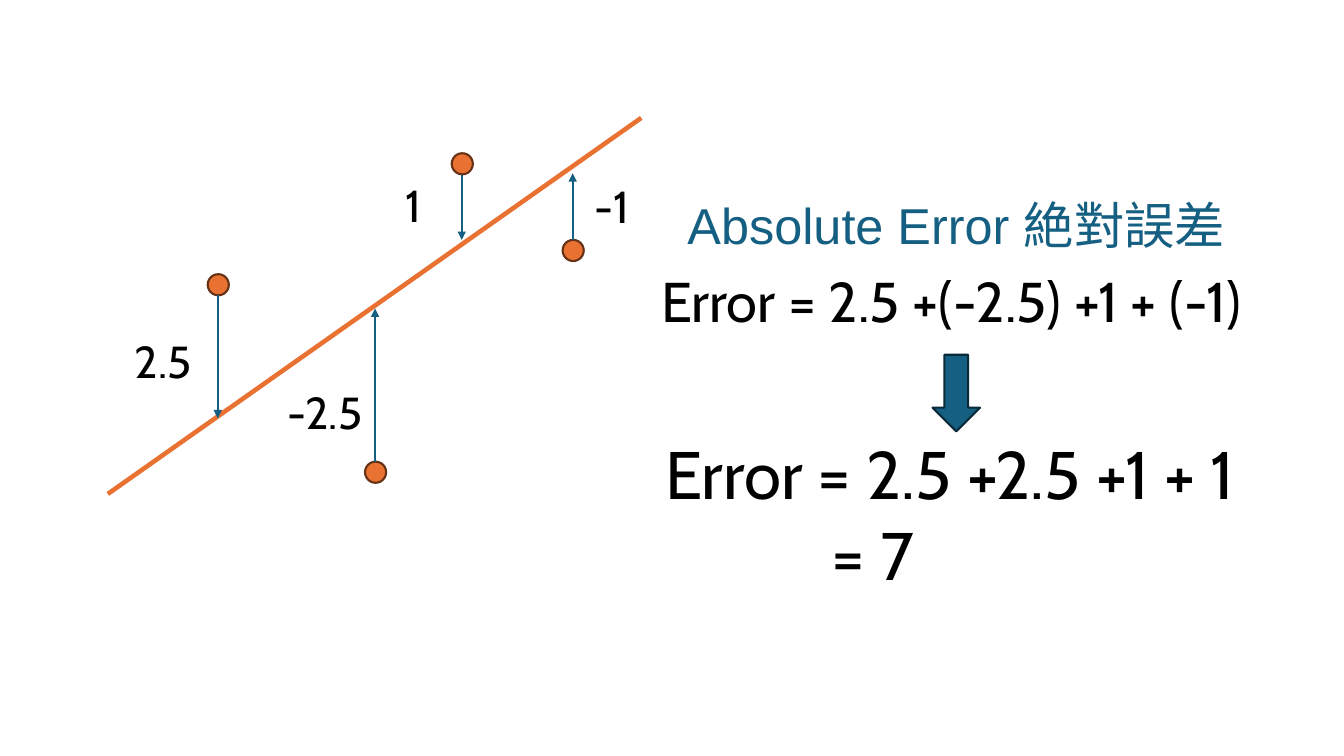
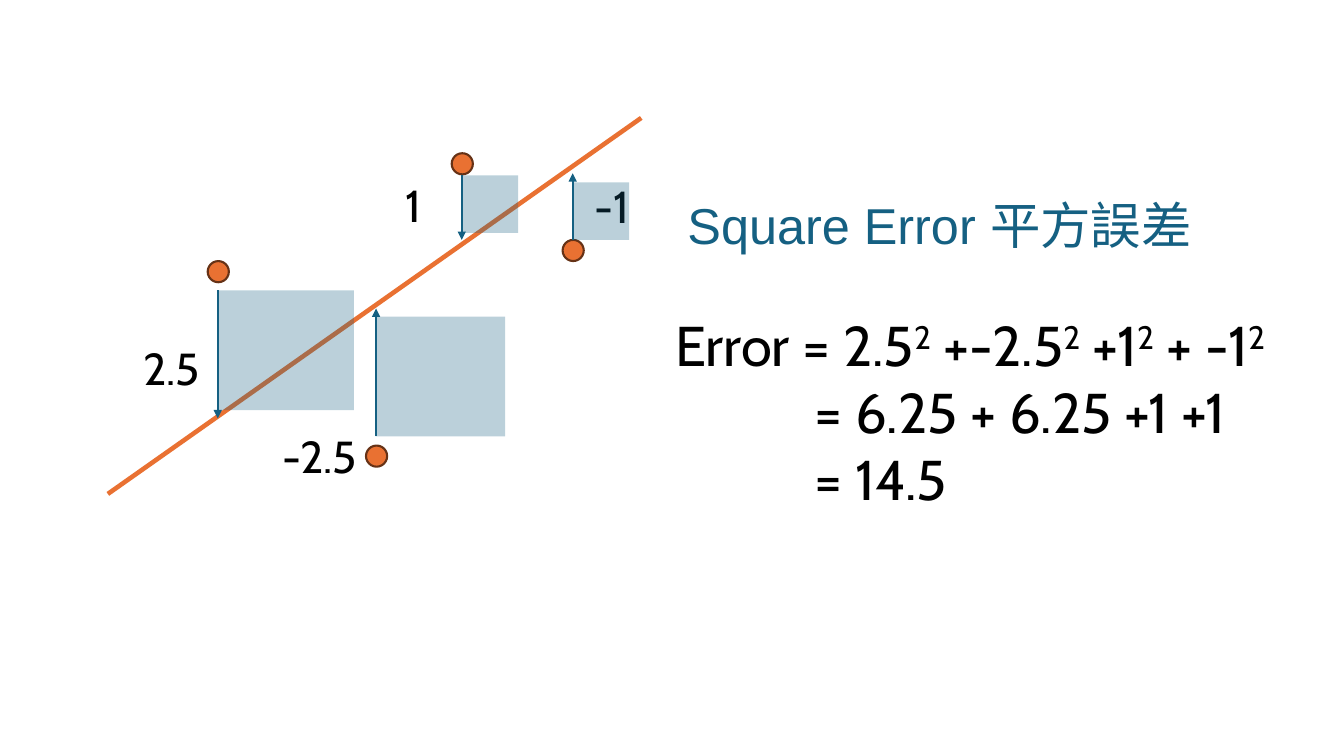
from dataclasses import dataclass

import pptx
import pptx.dml.color
import pptx.enum.shapes
import pptx.enum.text
import pptx.oxml.ns
import pptx.oxml.xmlchemy
import pptx.presentation
import pptx.shapes.autoshape
import pptx.shapes.connector
import pptx.slide
import pptx.util
from lxml import etree

RGBColor = pptx.dml.color.RGBColor
Shape = pptx.enum.shapes.MSO_SHAPE
qn = pptx.oxml.ns.qn

ORANGE = RGBColor(0xE9, 0x71, 0x32)
DARK_ORANGE = RGBColor(0x66, 0x32, 0x16)
BLUE = RGBColor(0x15, 0x60, 0x82)
DARK_BLUE = RGBColor(0x09, 0x2A, 0x39)
BLACK = RGBColor(0, 0, 0)

EMU_PER_PX = 9144  # 100 px to the inch
DOT_SIZE = 21
LABEL_HEIGHT = 64
SQUARE_OPACITY = 29


@dataclass(frozen=True)
class Residual:
    """A data point with the arrow from it to the fitted line."""
    label: str
    label_left: int
    label_top: int
    label_width: int
    x: int
    dot_top: int
    arrow_start: int
    arrow_end: int
    square_width: int = 0
    square_height: int = 0


@dataclass(frozen=True)
class Formula:
    """Lines of text; every second segment of a line is superscript."""
    left: int
    top: int
    width: int
    height: int
    size: int
    lines: tuple[tuple[str, ...], ...]
    indent: int = 0


SMALL_RESIDUALS = (
    Residual("1", 392, 171, 44, 458, 152, 174, 238, 56, 57),
    Residual("-1", 580, 172, 56, 568, 238, 238, 172, 56, 57),
)
ABSOLUTE_RESIDUALS = (
    Residual("2.5", 124, 326, 81, 216, 272, 293, 415),
    Residual("-2.5", 275, 377, 96, 372, 458, 458, 306),
    *SMALL_RESIDUALS,
)
SQUARE_RESIDUALS = (
    Residual("2.5", 132, 333, 81, 216, 259, 288, 415, 135, 119),
    Residual("-2.5", 270, 420, 96, 373, 442, 433, 306, 128, 119),
    *SMALL_RESIDUALS,
)
SIGNED_SUM = Formula(646, 259, 638, 77, 40, (("Error = 2.5 +(-2.5) +1 + (-1)",),))
ABSOLUTE_SUM = Formula(
    650, 424, 641, 172, 48, (("Error = 2.5 +2.5 +1 + 1",), ("= 7",)), indent=165)
SQUARE_SUM = Formula(
    660, 303, 652, 212, 40,
    (("Error = 2.5", "2", " +-2.5", "2", " +1", "2", " + -1", "2"),
     ("= 6.25 + 6.25 +1 +1",),
     ("= 14.5",)),
    indent=138)


def px(length: int) -> pptx.util.Emu:
    return pptx.util.Emu(length * EMU_PER_PX)


def add_line(slide: pptx.slide.Slide, start: tuple[int, int], end: tuple[int, int],
             color: RGBColor, weight: float) -> pptx.shapes.connector.Connector:
    line = slide.shapes.add_connector(
        pptx.enum.shapes.MSO_CONNECTOR.STRAIGHT, *map(px, (*start, *end)))
    line.line.color.rgb = color
    line.line.width = pptx.util.Pt(weight)
    etree.SubElement(line._element.spPr, qn("a:effectLst"))
    return line


def add_arrow(slide: pptx.slide.Slide, x: int, start: int, end: int) -> None:
    arrow = add_line(slide, (x, start), (x, end), BLUE, 1.5)
    etree.SubElement(arrow.line._get_or_add_ln(), qn("a:tailEnd"), type="triangle")


def add_filled(slide: pptx.slide.Slide, kind: Shape, left: int, top: int, width: int,
               height: int, fill: RGBColor,
               outline: RGBColor | None = None) -> pptx.shapes.autoshape.Shape:
    shape = slide.shapes.add_shape(kind, *map(px, (left, top, width, height)))
    shape.shadow.inherit = False
    shape.fill.solid()
    shape.fill.fore_color.rgb = fill
    if outline is None:
        shape.line.fill.background()
    else:
        shape.line.color.rgb = outline
        shape.line.width = pptx.util.Pt(1.5)
    return shape


def add_error_square(slide: pptx.slide.Slide, residual: Residual) -> None:
    """Draw the square from the arrow's start towards the fitted line."""
    top = residual.arrow_start
    if residual.arrow_end < residual.arrow_start:
        top -= residual.square_height
    square = add_filled(slide, Shape.RECTANGLE, residual.x, top,
                        residual.square_width, residual.square_height, BLUE)
    color = square._element.spPr.find(qn("a:solidFill")).find(qn("a:srgbClr"))
    etree.SubElement(color, qn("a:alpha"), val=str(SQUARE_OPACITY * 1000))


def add_formula(slide: pptx.slide.Slide, formula: Formula, font: str = "Cabin",
                color: RGBColor = BLACK) -> None:
    box = slide.shapes.add_textbox(
        *map(px, (formula.left, formula.top, formula.width, formula.height)))
    frame = box.text_frame
    frame.word_wrap = False
    frame.auto_size = pptx.enum.text.MSO_AUTO_SIZE.SHAPE_TO_FIT_TEXT
    for row, segments in enumerate(formula.lines):
        paragraph = frame.add_paragraph() if row else frame.paragraphs[0]
        if row:
            paragraph._p.get_or_add_pPr().set("marL", str(px(formula.indent)))
        for position, segment in enumerate(segments):
            run = paragraph.add_run()
            run.text = segment
            run.font.name = font
            run.font.size = pptx.util.Pt(formula.size)
            run.font.color.rgb = color
            if position % 2:
                run.font._element.set("baseline", "30000")


def add_error_slide(deck: pptx.presentation.Presentation, title: str, title_width: int,
                    residuals: tuple[Residual, ...],
                    formulas: tuple[Formula, ...]) -> pptx.slide.Slide:
    slide = deck.slides.add_slide(deck.slide_layouts[6])
    add_line(slide, (107, 490), (636, 117), ORANGE, 3.25)
    for residual in residuals:
        add_filled(slide, Shape.OVAL, residual.x - DOT_SIZE // 2, residual.dot_top,
                   DOT_SIZE, DOT_SIZE, ORANGE, DARK_ORANGE)
        add_arrow(slide, residual.x, residual.arrow_start, residual.arrow_end)
        add_formula(slide, Formula(residual.label_left, residual.label_top,
                                   residual.label_width, LABEL_HEIGHT, 32,
                                   ((residual.label,),)))
    add_formula(slide, Formula(672, 188, title_width, 71, 36, ((title,),)), "Arial", BLUE)
    for formula in formulas:
        add_formula(slide, formula)
    return slide


def main() -> None:
    deck = pptx.Presentation()
    deck.slide_width = pptx.util.Inches(13.33)
    deck.slide_height = pptx.util.Inches(7.5)

    absolute = add_error_slide(deck, "Absolute Error 絶對誤差", 606,
                               ABSOLUTE_RESIDUALS, (SIGNED_SUM, ABSOLUTE_SUM))
    add_filled(absolute, Shape.DOWN_ARROW, 925, 352, 47, 76, BLUE, DARK_BLUE)

    square = add_error_slide(deck, "Square Error 平方誤差", 560,
                             SQUARE_RESIDUALS, (SQUARE_SUM,))
    for residual in SQUARE_RESIDUALS:
        add_error_square(square, residual)

    deck.save("out.pptx")


if __name__ == "__main__":
    main()
